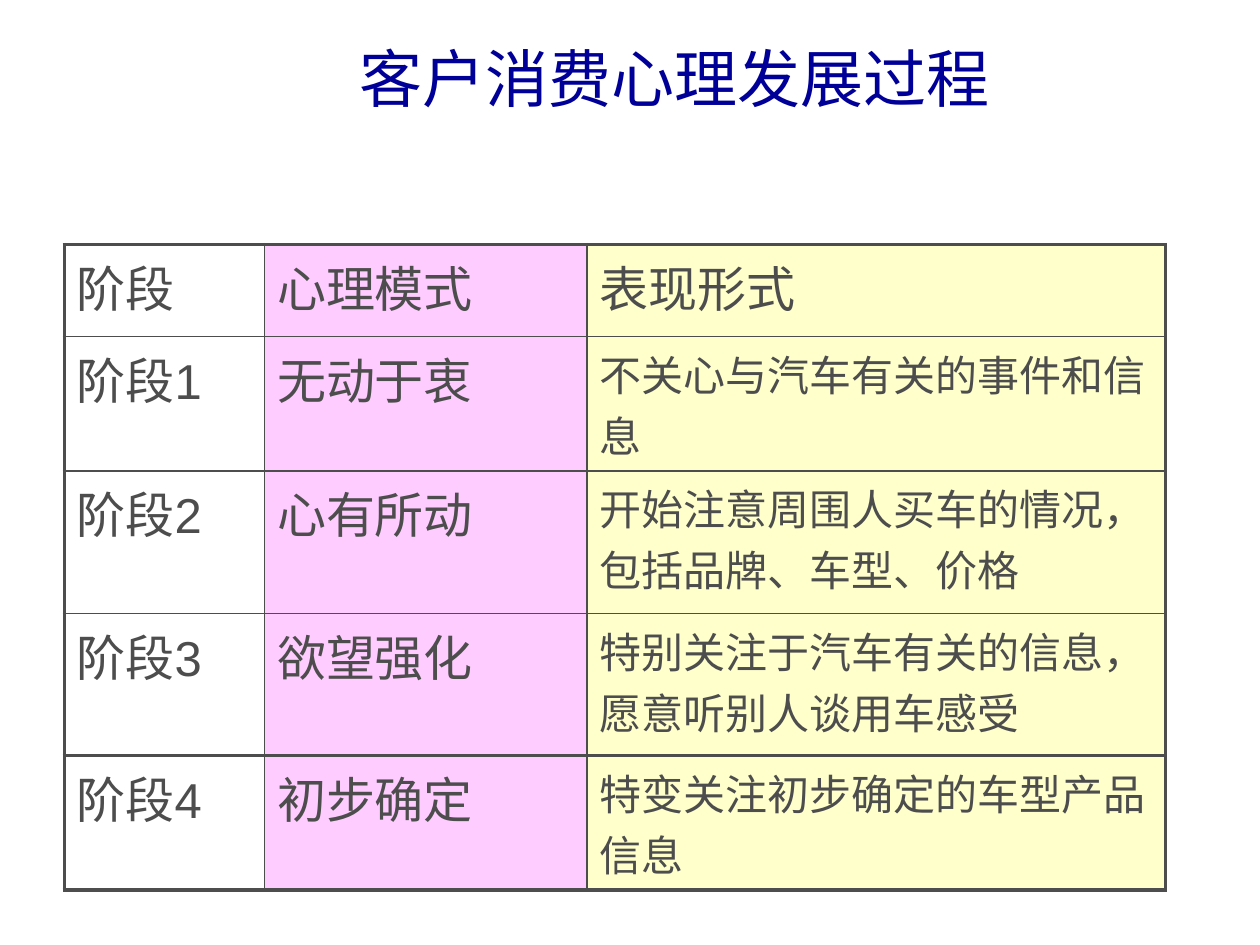
from dataclasses import dataclass

from lxml.etree import SubElement
from pptx import Presentation
from pptx.dml.color import RGBColor
from pptx.enum.text import MSO_ANCHOR as Anchor, PP_ALIGN as Align
from pptx.oxml.ns import qn
from pptx.util import Inches, Pt

COLORS = {"title": "000099", "text": "4D4D4D", "pink": "FFCCFF", "yellow": "FFFFCC"}
FONT = "Arial"
THIN, THICK = 1, 2.25
HEAVY_ROW_EDGES = {0, 4, 5}


@dataclass
class Column:
    """Width, body text size and fill of one table column."""
    width: float
    size: int
    fill: str | None


@dataclass
class Stage:
    """One table row and its height."""
    height: float
    texts: tuple[str, str, str]


COLUMNS = [Column(1.59, 28, None), Column(2.56, 28, "pink"), Column(4.59, 24, "yellow")]
HEADER_SIZE = 28
STAGES = [
    Stage(0.73, ("阶段", "心理模式", "表现形式")),
    Stage(1, ("阶段1", "无动于衷", "不关心与汽车有关的事件和信息")),
    Stage(1.13, ("阶段2", "心有所动", "开始注意周围人买车的情况，包括品牌、车型、价格")),
    Stage(1.13, ("阶段3", "欲望强化", "特别关注于汽车有关的信息，愿意听别人谈用车感受")),
    Stage(1.03, ("阶段4", "初步确定", "特变关注初步确定的车型产品信息")),
]


def add_text(para, text: str, size: float, color: str) -> None:
    """Add one formatted run to a paragraph."""
    span = para.add_run()
    span.text = text
    span.font.name = FONT
    span.font.size = Pt(size)
    span.font.color.rgb = RGBColor.from_string(COLORS[color])


def add_border(cell, side: str, width: float) -> None:
    """Draw one solid side of a table cell."""
    line = SubElement(cell._tc.get_or_add_tcPr(), qn(f"a:ln{side}"), w=str(Pt(width)))
    fill = SubElement(line, qn("a:solidFill"))
    SubElement(fill, qn("a:srgbClr"), val=COLORS["text"])


def add_title(page, text: str) -> None:
    """Place and fill the title placeholder."""
    box = page.shapes.title
    box.left, box.top, box.width, box.height = map(Inches, (2.75, 0.3, 7.25, 0.62))
    box.text_frame.vertical_anchor = Anchor.MIDDLE
    para = box.text_frame.paragraphs[0]
    para.alignment = Align.LEFT
    add_text(para, text, 36, "title")


def format_cell(cell, row: int, col: int) -> None:
    """Write the text, borders and fill of one cell."""
    column = COLUMNS[col]
    size = column.size if row else HEADER_SIZE
    add_text(cell.text_frame.paragraphs[0], STAGES[row].texts[col], size, "text")
    heavy_sides = {
        "L": col == 0,
        "R": col == len(COLUMNS) - 1,
        "T": row in HEAVY_ROW_EDGES,
        "B": row + 1 in HEAVY_ROW_EDGES,
    }
    for side, heavy in heavy_sides.items():
        add_border(cell, side, THICK if heavy else THIN)
    if column.fill:
        cell.fill.solid()
        cell.fill.fore_color.rgb = RGBColor.from_string(COLORS[column.fill])
    else:
        cell.fill.background()


def add_stage_table(page) -> None:
    """Add the table of customer stages."""
    width = sum(column.width for column in COLUMNS)
    height = sum(stage.height for stage in STAGES)
    table = page.shapes.add_table(
        len(STAGES), len(COLUMNS), Inches(0.51), Inches(1.94), Inches(width), Inches(height)
    ).table
    table.first_row = table.horz_banding = False
    for col, column in enumerate(COLUMNS):
        table.columns[col].width = Inches(column.width)
    for row, stage in enumerate(STAGES):
        table.rows[row].height = Inches(stage.height)
        for col in range(len(COLUMNS)):
            format_cell(table.cell(row, col), row, col)


def main() -> None:
    """Build and save the deck."""
    deck = Presentation()
    deck.slide_width, deck.slide_height = Inches(10), Inches(7.5)
    page = deck.slides.add_slide(deck.slide_layouts[5])
    add_stage_table(page)
    add_title(page, "客户消费心理发展过程")
    deck.save("out.pptx")


if __name__ == "__main__":
    main()
